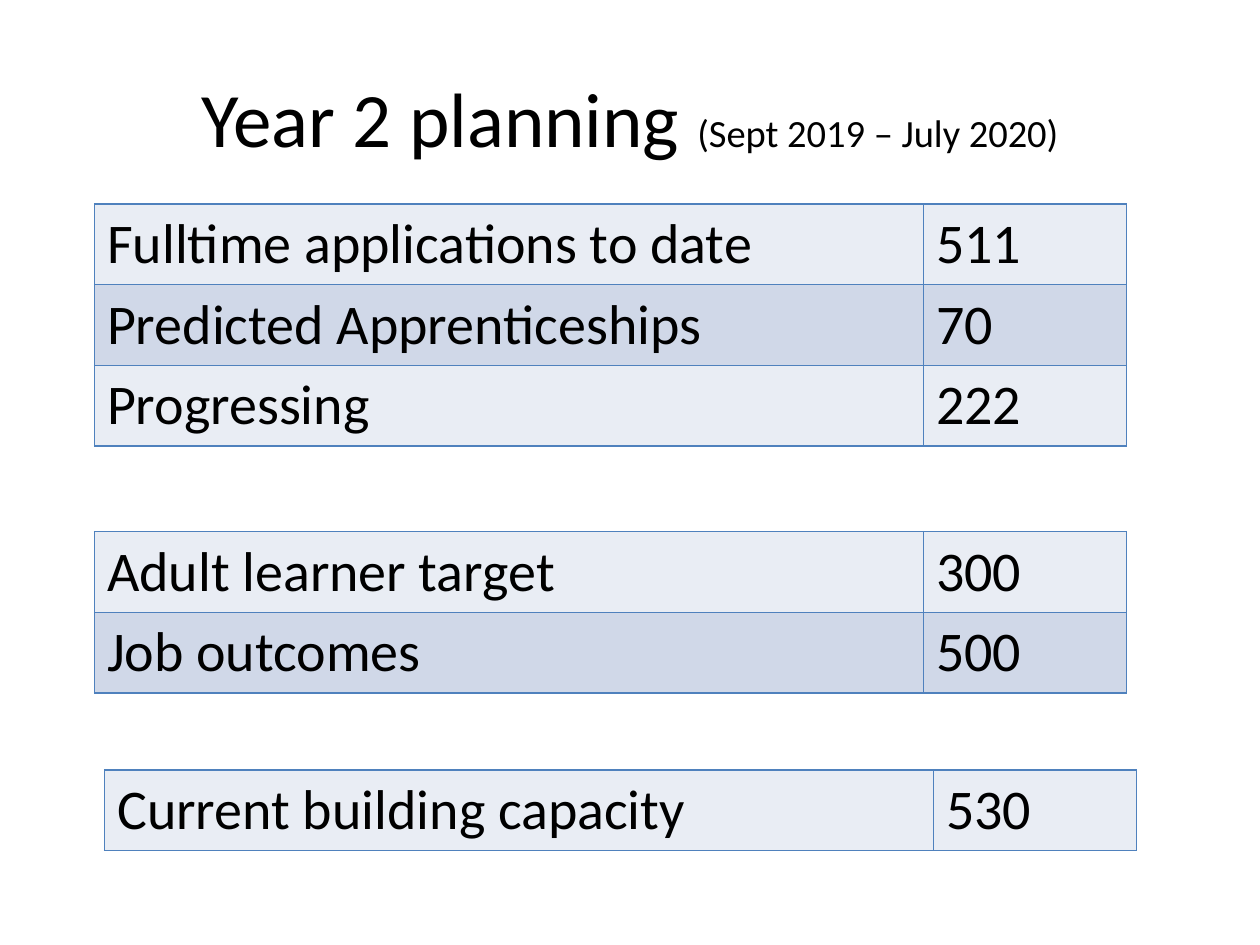
from lxml import etree
from pptx import Presentation
from pptx.dml.color import RGBColor
from pptx.enum.text import MSO_ANCHOR, PP_ALIGN
from pptx.oxml.ns import qn
from pptx.util import Inches, Pt

CENTER = PP_ALIGN.CENTER
MIDDLE = MSO_ANCHOR.MIDDLE

FONT = "Calibri"
COLORS = {
    "text": "000000",
    "border": "4F81BD",
    "band_light": "E9EDF4",
    "band_dark": "D0D8E8",
}
COL_WIDTHS = (6.58, 1.61)
ROW_HEIGHT = 0.64


def add_run(p, text, size=32, color="text"):
    r = p.add_run()
    r.text = text
    r.font.name = FONT
    r.font.size = Pt(size)
    r.font.color.rgb = RGBColor.from_string(COLORS[color])


class SlideBuilder:
    """Holds the table style and the current slide."""

    bands = ("band_light", "band_dark")
    border_width = Pt(1)

    def __init__(self, slide):
        self.s = slide

    def title(self, left, top, width, height, parts):
        sp = self.s.shapes.add_textbox(
            Inches(left), Inches(top), Inches(width), Inches(height))
        tf = sp.text_frame
        tf.word_wrap = True
        tf.vertical_anchor = MIDDLE
        p = tf.paragraphs[0]
        p.alignment = CENTER
        for text, size in parts:
            add_run(p, text, size=size)

    def table(self, left, top, rows):
        tbl = self.s.shapes.add_table(
            len(rows), len(COL_WIDTHS), Inches(left), Inches(top),
            Inches(sum(COL_WIDTHS)), Inches(ROW_HEIGHT * len(rows))).table
        tbl.first_row = False
        for col, width in zip(tbl.columns, COL_WIDTHS):
            col.width = Inches(width)
        for i, values in enumerate(rows):
            tbl.rows[i].height = Inches(ROW_HEIGHT)
            for j, value in enumerate(values):
                self.cell(tbl.cell(i, j), value, self.bands[i % 2])

    def cell(self, cell, text, fill):
        add_run(cell.text_frame.paragraphs[0], text)
        self.borders(cell)
        cell.fill.solid()
        cell.fill.fore_color.rgb = RGBColor.from_string(COLORS[fill])

    def borders(self, cell):
        tc_pr = cell._tc.get_or_add_tcPr()
        for side in ("a:lnL", "a:lnR", "a:lnT", "a:lnB"):
            ln = etree.SubElement(tc_pr, qn(side), w=str(self.border_width))
            fill = etree.SubElement(ln, qn("a:solidFill"))
            etree.SubElement(fill, qn("a:srgbClr"), val=COLORS["border"])


def main():
    prs = Presentation()
    prs.slide_width, prs.slide_height = Inches(10), Inches(7.5)
    builder = SlideBuilder(prs.slides.add_slide(prs.slide_layouts[6]))

    # Title with the period in smaller type
    builder.title(0.5, 0.3, 9, 1.25,
                  [("Year 2 planning ", 44), ("(Sept 2019 – July 2020)", 22)])

    # Expected learners
    builder.table(0.75, 1.62, [("Fulltime applications to date", "511"),
                               ("Predicted Apprenticeships", "70"),
                               ("Progressing", "222")])

    # Targets
    builder.table(0.75, 4.22, [("Adult learner target", "300"),
                               ("Job outcomes", "500")])

    # Capacity
    builder.table(0.83, 6.11, [("Current building capacity", "530")])

    prs.save("out.pptx")


if __name__ == "__main__":
    main()
